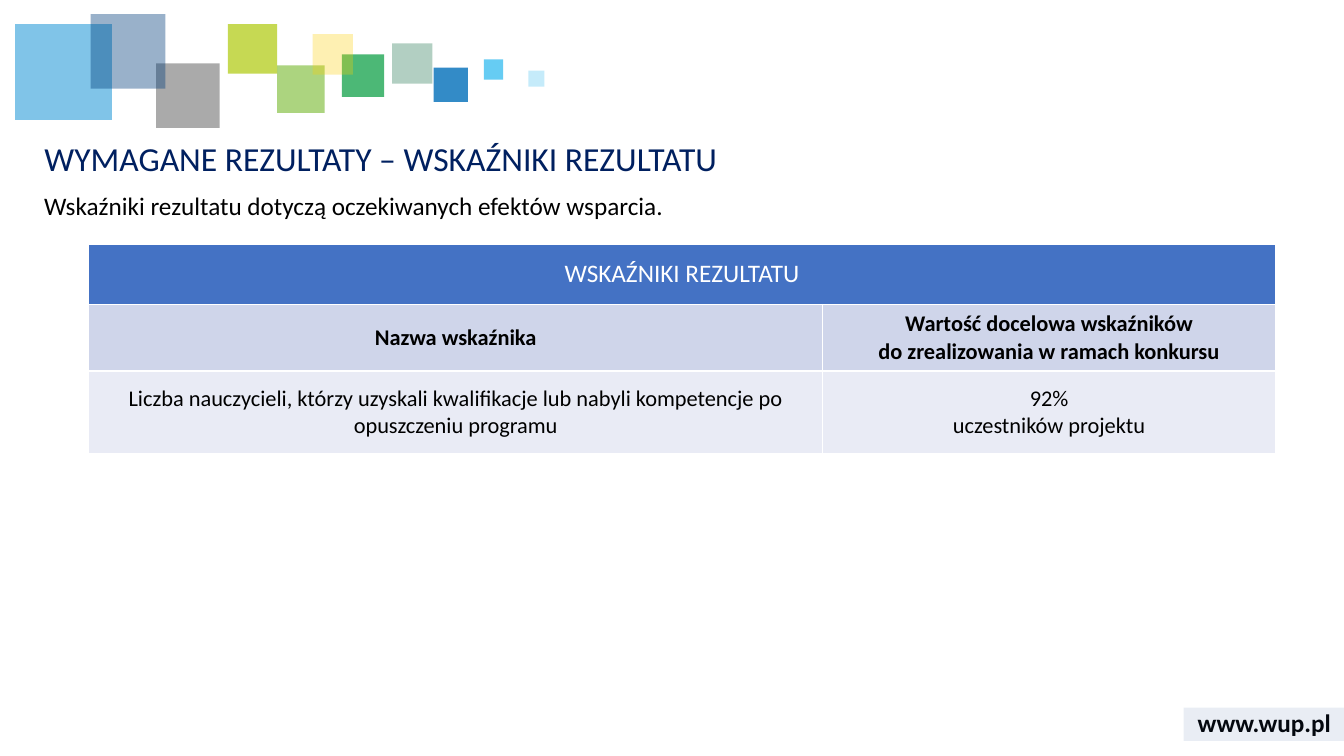
"""Build the slide about required results and result indicators."""
import dataclasses

import lxml.etree
import pptx
import pptx.dml.color
import pptx.enum.shapes
import pptx.enum.text
import pptx.oxml.ns
import pptx.util

ALIGN = pptx.enum.text.PP_ALIGN
ANCHOR = pptx.enum.text.MSO_ANCHOR


@dataclasses.dataclass(frozen=True)
class Theme:
    """Hold the font, colours, type sizes and grid cell of the slide."""
    font: str = "Calibri"
    title_color: str = "002060"
    text_color: str = "000000"
    header_text: str = "FFFFFF"
    row_fills: tuple = ("4472C4", "CFD5EA", "E9EBF5")
    address_fill: str = "2F5597"
    title_size: int = 24
    body_size: int = 18
    cell_size: int = 16
    grid_cell: float = 0.1


THEME = Theme()

SQUARES = [
    (38.9, 4.3, 4, 4, "006138", 30),
    (43, 6.7, 3.4, 3.4, "006EB9", 80),
    (33.9, 5.4, 4.2, 4.2, "009A3C", 70),
    (1.5, 2.4, 9.6, 9.5, "028BD3", 50),
    (27.5, 6.5, 4.7, 4.7, "75B82A", 60),
    (15.5, 6.3, 6.3, 6.4, "575757", 50),
    (9, 1.4, 7.4, 7.4, "003D7C", 40),
    (48, 5.9, 1.9, 2, "40C0F1", 80),
    (22.6, 2.4, 4.9, 4.9, "AFCA0B", 70),
    (31, 3.4, 4, 4, "FED000", 30),
    (52.4, 7, 1.6, 1.6, "40C0F1", 30),
]

INDICATORS = [
    ("WSKAŹNIKI REZULTATU", ""),
    ("Nazwa wskaźnika", "Wartość docelowa wskaźników\vdo zrealizowania w ramach konkursu"),
    ("Liczba nauczycieli, którzy uzyskali kwalifikacje lub nabyli kompetencje po "
     "opuszczeniu programu", "92%\nuczestników projektu"),
]


def grid(count):
    """Return the length of a number of grid cells."""
    return pptx.util.Inches(count * THEME.grid_cell)


def color(value):
    """Return a colour from its hexadecimal form."""
    return pptx.dml.color.RGBColor.from_string(value)


def write(text_frame, text, size, text_color, bold=False, align=ALIGN.LEFT, spacing=1.0):
    """Put formatted text into a text frame."""
    text_frame.text = text
    text_frame.word_wrap = True
    for paragraph in text_frame.paragraphs:
        paragraph.alignment = align
        paragraph.line_spacing = spacing
        for run in paragraph.runs:
            run.font.name = THEME.font
            run.font.size = pptx.util.Pt(size)
            run.font.bold = bold
            run.font.color.rgb = color(text_color)


def add_rectangle(slide, left, top, width, height, fill, opacity):
    """Add a borderless translucent rectangle."""
    shape = slide.shapes.add_shape(
        pptx.enum.shapes.MSO_SHAPE.RECTANGLE, *map(grid, (left, top, width, height)))
    shape.shadow.inherit = False
    shape.line.fill.background()
    shape.fill.solid()
    shape.fill.fore_color.rgb = color(fill)
    tint = shape.fill._xPr.find(".//" + pptx.oxml.ns.qn("a:srgbClr"))
    lxml.etree.SubElement(tint, pptx.oxml.ns.qn("a:alpha"), val=str(opacity * 1000))


def add_title(slide, text):
    """Place and format the title placeholder."""
    title = slide.shapes.title
    title.left, title.top, title.width, title.height = map(grid, (3.4, 13.6, 124.1, 5.5))
    write(title.text_frame, text, THEME.title_size, THEME.title_color, spacing=0.9)
    title.text_frame.vertical_anchor = ANCHOR.TOP


def add_text(slide, bounds, text, anchor=ANCHOR.TOP, **style):
    """Add a text box in the body size."""
    box = slide.shapes.add_textbox(*map(grid, bounds))
    write(box.text_frame, text, THEME.body_size, THEME.text_color, **style)
    box.text_frame.vertical_anchor = anchor


def add_indicator_table(slide):
    """Add the indicator table with a merged header row."""
    table = slide.shapes.add_table(
        len(INDICATORS), 2, *map(grid, (8.8, 24.2, 117.7, 20.8))).table
    for column, width in zip(table.columns, (72.8, 44.9)):
        column.width = grid(width)
    for row, height in zip(table.rows, (6, 6.6, 8.2)):
        row.height = grid(height)
    table.cell(0, 0).merge(table.cell(0, 1))
    for row_index, texts in enumerate(INDICATORS):
        header = row_index == 0
        for column_index, text in enumerate(texts):
            cell = table.cell(row_index, column_index)
            cell.fill.solid()
            cell.fill.fore_color.rgb = color(THEME.row_fills[row_index])
            cell.vertical_anchor = ANCHOR.MIDDLE
            if not cell.is_spanned:
                write(cell.text_frame, text,
                      THEME.body_size if header else THEME.cell_size,
                      THEME.header_text if header else THEME.text_color,
                      bold=row_index == 1, align=ALIGN.CENTER)


def main():
    """Build and save the presentation."""
    presentation = pptx.Presentation()
    presentation.slide_width = pptx.util.Inches(13.33)
    presentation.slide_height = pptx.util.Inches(7.5)
    slide = presentation.slides.add_slide(presentation.slide_layouts[5])
    add_text(slide, (117.4, 69.7, 16, 4), "www.wup.pl", ANCHOR.MIDDLE,
             bold=True, align=ALIGN.CENTER)
    for square in SQUARES:
        add_rectangle(slide, *square)
    add_rectangle(slide, 117.4, 70.2, 16, 3.3, THEME.address_fill, 10)
    add_title(slide, "WYMAGANE REZULTATY – WSKAŹNIKI REZULTATU")
    add_text(slide, (3.4, 18.7, 124.1, 4.5),
             "Wskaźniki rezultatu dotyczą oczekiwanych efektów wsparcia.", spacing=0.9)
    add_indicator_table(slide)
    presentation.save("out.pptx")


if __name__ == "__main__":
    main()
